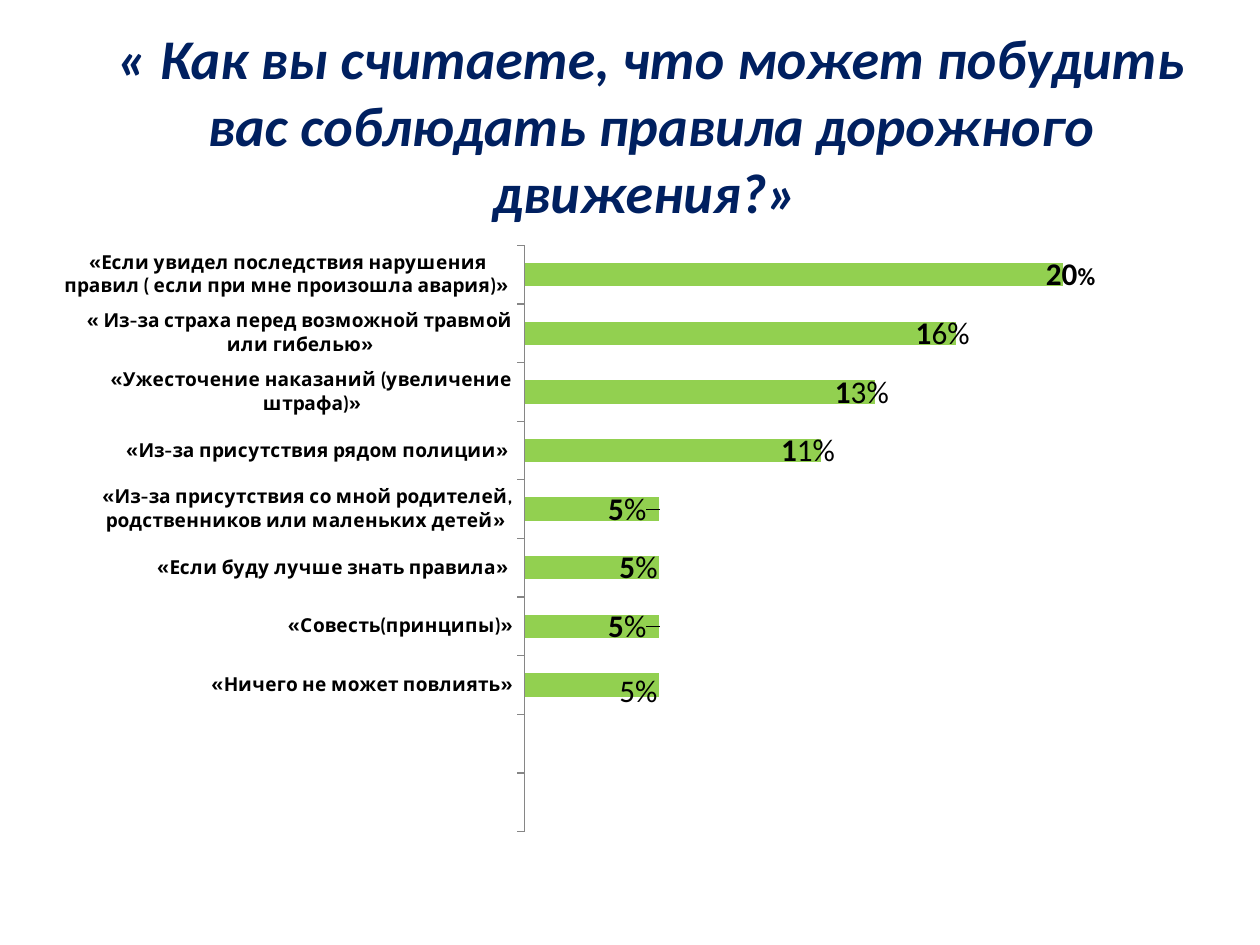
"""Build a survey slide: a title above a bar chart of reasons to obey traffic rules."""
import pptx
import pptx.chart.data
import pptx.dml.color
import pptx.enum.chart
import pptx.enum.text
import pptx.oxml
import pptx.util
from pptx.util import Inches


def rgb(value):
    return pptx.dml.color.RGBColor.from_string(value)


def style(font, name, size, color, bold):
    font.name = name
    font.size = pptx.util.Pt(size)
    font.color.rgb = rgb(color)
    font.bold = bold


prs = pptx.Presentation()
prs.slide_width, prs.slide_height = Inches(10), Inches(7.5)
s = prs.slides.add_slide(prs.slide_layouts[6])

sp = s.shapes.add_textbox(Inches(0.67), Inches(0.36), Inches(9), Inches(1.25))
tf = sp.text_frame
tf.word_wrap = True
tf.vertical_anchor = pptx.enum.text.MSO_ANCHOR.MIDDLE
p = tf.paragraphs[0]
p.alignment = pptx.enum.text.PP_ALIGN.CENTER
r = p.add_run()
r.text = "« Как вы считаете, что может побудить вас соблюдать правила дорожного движения?» "
style(r.font, "Calibri", 32, "002060", True)
r.font.italic = True

answers = [
    ("", None),
    ("", None),
    ("«Ничего не может повлиять»", 0.05),
    ("«Совесть(принципы)»", 0.05),
    ("«Если буду лучше знать правила» ", 0.05),
    ("«Из-за присутствия со мной родителей, родственников или маленьких детей» ", 0.05),
    ("«Из-за присутствия рядом полиции» ", 0.11),
    ("«Ужесточение наказаний (увеличение штрафа)»", 0.13),
    ("« Из-за страха перед возможной травмой или гибелью»", 0.16),
    ("«Если увидел последствия нарушения правил ( если при мне произошла авария)» ", 0.2),
]
data = pptx.chart.data.CategoryChartData(number_format="0.0%")
data.categories = [answer for answer, share in answers]
data.add_series("Series 1", [share for answer, share in answers])
chart = s.shapes.add_chart(
    pptx.enum.chart.XL_CHART_TYPE.BAR_CLUSTERED,
    Inches(0.51), Inches(1.7), Inches(9), Inches(4.95), data).chart
chart.has_legend = False
chart.has_title = False
style(chart.font, "Calibri", 10.5, "000000", True)

axis = chart.category_axis
axis.major_tick_mark = pptx.enum.chart.XL_TICK_MARK.OUTSIDE
axis.format.line.color.rgb = rgb("868686")
style(axis.tick_labels.font, "Cabin", 11, "000000", True)
axis = chart.value_axis
axis.visible = False
axis.has_major_gridlines = False
axis.minimum_scale, axis.maximum_scale = 0, 0.25

plot = chart.plots[0]
plot.gap_width = 150
plot.vary_by_categories = False
series = plot.series[0]
series.format.fill.solid()
series.format.fill.fore_color.rgb = rgb("92D050")
labels = series.data_labels
labels.show_value = True
labels.number_format = "0.0%"
labels.number_format_is_linked = False
labels.position = pptx.enum.chart.XL_LABEL_POSITION.OUTSIDE_END
style(labels.font, "Calibri", 18, "000000", True)

layout_xml = (
    '<c:layout xmlns:c="http://schemas.openxmlformats.org/drawingml/2006/chart">'
    "<c:manualLayout>{}</c:manualLayout></c:layout>")
point_labels = [
    (2, -0.04, 0.01, [("5%", 18, False)]),
    (3, -0.05, 0, [("5", 18, True), ("%", 18, False)]),
    (4, -0.04, 0, [("5", 18, True), ("%", 18, False)]),
    (5, -0.05, 0, [("5", 18, True), ("%", 18, False)]),
    (6, -0.04, 0, [("1", 18, True), ("1%", 18, False)]),
    (7, -0.04, 0, [("1", 18, True), ("3%", 18, False)]),
    (8, -0.04, 0, [("1", 18, True), ("6%", 18, False)]),
    (9, -0.02, 0, [("20", 18, True), ("%", 14, True)]),
]
for index, dx, dy, runs in point_labels:
    label = series.points[index].data_label
    p = label.text_frame.paragraphs[0]
    for text, size, bold in runs:
        r = p.add_run()
        r.text = text
        style(r.font, "Calibri", size, "000000", bold)
    label.position = pptx.enum.chart.XL_LABEL_POSITION.OUTSIDE_END
    offset = f'<c:x val="{dx}"/><c:y val="{dy}"/>'
    element = labels._element.xpath(f"c:dLbl[c:idx/@val={index}]")[0]
    element.insert(1, pptx.oxml.parse_xml(layout_xml.format(offset)))

area = chart._chartSpace.chart.plotArea
for old in area.xpath("c:layout"):
    area.remove(old)
frame = (
    '<c:layoutTarget val="inner"/><c:xMode val="edge"/><c:yMode val="edge"/>'
    '<c:x val="0.4"/><c:y val="0.05"/><c:w val="0.6"/><c:h val="0.94"/>')
area.insert(0, pptx.oxml.parse_xml(layout_xml.format(frame)))

prs.save("out.pptx")
